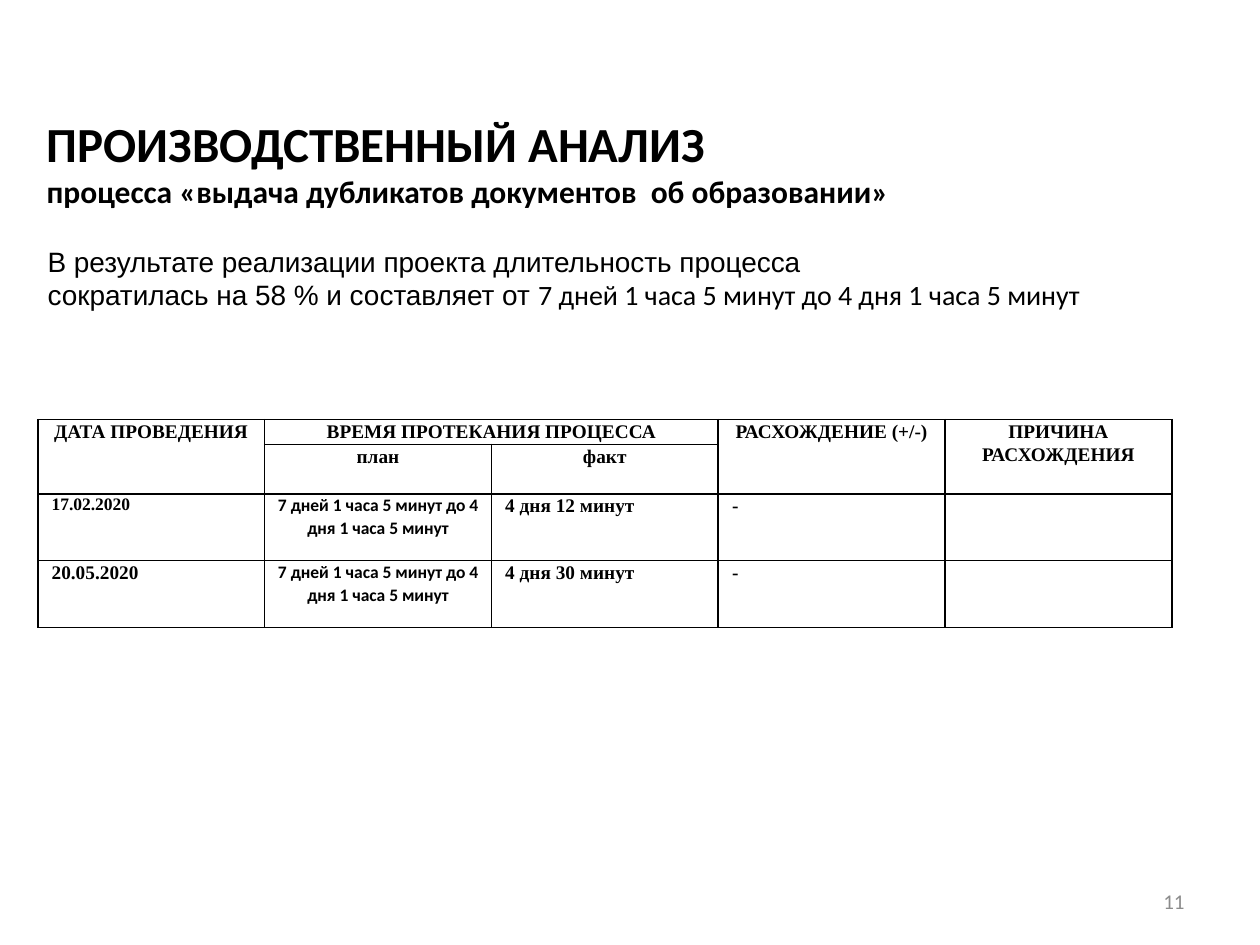
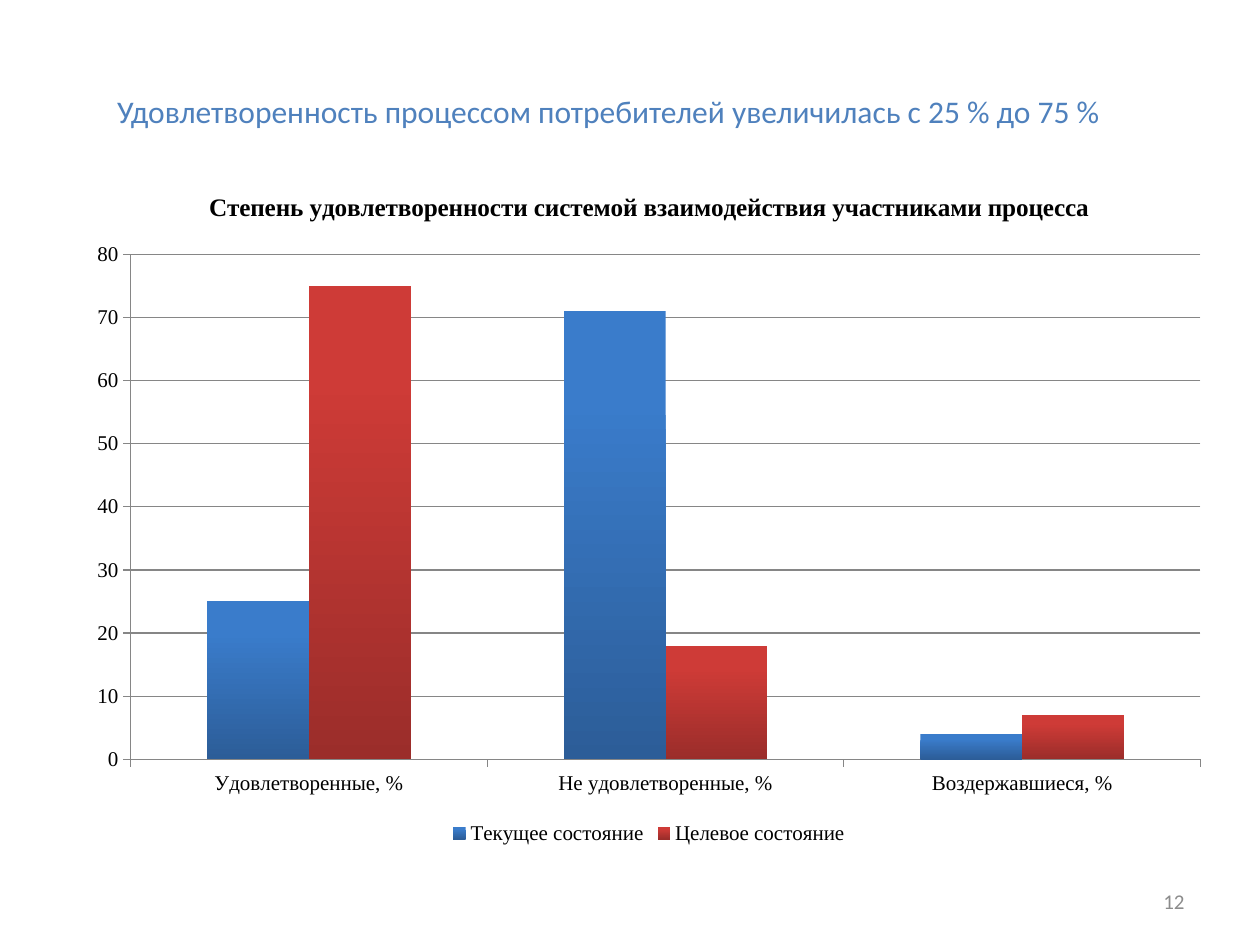
from lxml import etree
from pptx import Presentation
from pptx.chart.data import CategoryChartData
from pptx.dml.color import RGBColor
from pptx.enum.chart import XL_CHART_TYPE, XL_LEGEND_POSITION, XL_TICK_MARK
from pptx.enum.text import MSO_ANCHOR, MSO_AUTO_SIZE, PP_ALIGN
from pptx.oxml.ns import qn
from pptx.util import Inches, Pt

LEFT, CENTER, RIGHT = PP_ALIGN.LEFT, PP_ALIGN.CENTER, PP_ALIGN.RIGHT
TOP, MIDDLE = MSO_ANCHOR.TOP, MSO_ANCHOR.MIDDLE
FIT_SHAPE = MSO_AUTO_SIZE.SHAPE_TO_FIT_TEXT
COLUMNS = XL_CHART_TYPE.COLUMN_CLUSTERED
LEGEND_BOTTOM = XL_LEGEND_POSITION.BOTTOM
TICK_OUTSIDE = XL_TICK_MARK.OUTSIDE

SANS, SERIF, PLAIN = "Calibri", "Times New Roman", "Arial"
BLACK, GREY, BLUE, GRID = "000000", "8C8C8C", "4F81BD", "868686"
TITLE_ONLY = 5

DURATION = "7 дней 1 часа 5 минут до 4 дня 1 часа 5 минут"
PLAN_FORMAT = {"name": SANS, "size": Pt(10)}
HEADINGS = [
    # row, column, last row, last column, text
    (0, 0, 1, 0, "ДАТА ПРОВЕДЕНИЯ"),
    (0, 1, 0, 2, "ВРЕМЯ ПРОТЕКАНИЯ ПРОЦЕССА"),
    (0, 3, 1, 3, "РАСХОЖДЕНИЕ (+/-)"),
    (0, 4, 1, 4, "ПРИЧИНА РАСХОЖДЕНИЯ"),
    (1, 1, 1, 1, "план"),
    (1, 2, 1, 2, "факт"),
]
MEASUREMENTS = [
    ("17.02.2020", Pt(10), "4 дня 12 минут"),
    ("20.05.2020", Pt(11), "4 дня 30 минут"),
]
SATISFACTION_GROUPS = ["Удовлетворенные, %", "Не удовлетворенные, %", "Воздержавшиеся, %"]
SATISFACTION = [
    # state, values, top and bottom colour of the columns
    ("Текущее состояние", (25, 71, 4), "3A7CCB", "2C5D98"),
    ("Целевое состояние", (75, 18, 7), "CE3B37", "9B2D2A"),
]


def rgb(value):
    return RGBColor.from_string(value)


def apply_font(font, color=BLACK, **values):
    for attribute, value in values.items():
        setattr(font, attribute, value)
    font.color.rgb = rgb(color)


def fill_frame(frame, paragraphs, align=LEFT, **frame_format):
    """Write paragraphs, each a list of (text, font format) runs."""
    for attribute, value in frame_format.items():
        setattr(frame, attribute, value)
    for index, runs in enumerate(paragraphs):
        paragraph = frame.add_paragraph() if index else frame.paragraphs[0]
        paragraph.alignment = align
        for text, font_format in runs:
            run = paragraph.add_run()
            run.text = text
            apply_font(run.font, **font_format)


def add_text(slide, box, paragraphs, **options):
    text_box = slide.shapes.add_textbox(*map(Inches, box))
    fill_frame(text_box.text_frame, paragraphs, **{"word_wrap": True, **options})


def add_titled_slide(presentation, number, title_box, title_paragraphs, wrap=True):
    """Add a slide with its formatted title and page number."""
    slide = presentation.slides.add_slide(presentation.slide_layouts[TITLE_ONLY])
    title = slide.shapes.title
    title.left, title.top, title.width, title.height = map(Inches, title_box)
    fill_frame(title.text_frame, title_paragraphs, vertical_anchor=TOP,
               word_wrap=wrap, auto_size=FIT_SHAPE)
    add_text(slide, (7.17, 6.95, 2.33, 0.4),
             [[(str(number), {"name": SANS, "size": Pt(12), "color": GREY})]],
             align=RIGHT, vertical_anchor=MIDDLE)
    return slide


def outline_cell(cell):
    properties = cell._tc.get_or_add_tcPr()
    for side in ("a:lnL", "a:lnR", "a:lnT", "a:lnB"):
        line = etree.SubElement(properties, qn(side), w=str(Pt(1)))
        solid = etree.SubElement(line, qn("a:solidFill"))
        etree.SubElement(solid, qn("a:srgbClr"), val=BLACK)
    cell.fill.background()


def write_cell(cell, text, align=CENTER, indent=0.07, **font_format):
    cell.margin_left = Inches(indent)
    font = {"name": SERIF, "size": Pt(11), "bold": True, **font_format}
    fill_frame(cell.text_frame, [[(text, font)]], align=align)
    cell.text_frame.paragraphs[0].line_spacing = 1.07


def add_measurement_table(slide):
    heights = [0.19, 0.19, 0.53, 0.53]
    table = slide.shapes.add_table(len(heights), 5, Inches(0.3), Inches(3.33),
                                   Inches(9), Inches(sum(heights))).table
    table.first_row = table.horz_banding = False
    for row, height in zip(table.rows, heights):
        row.height = Inches(height)
    for cell in table.iter_cells():
        cell.margin_left = cell.margin_right = Inches(0.07)
        cell.margin_top = cell.margin_bottom = 0
        outline_cell(cell)
    for row, column, last_row, last_column, text in HEADINGS:
        cell = table.cell(row, column)
        if (row, column) != (last_row, last_column):
            cell.merge(table.cell(last_row, last_column))
        write_cell(cell, text)
    for row, (date, date_size, actual) in enumerate(MEASUREMENTS, start=2):
        write_cell(table.cell(row, 0), date, LEFT, 0.11, size=date_size)
        write_cell(table.cell(row, 1), DURATION, **PLAN_FORMAT)
        write_cell(table.cell(row, 2), actual, LEFT, 0.11)
        write_cell(table.cell(row, 3), "-", LEFT, 0.11)


def shade_series(series, top_color, bottom_color):
    fill = series.format.fill
    fill.gradient()
    fill.gradient_angle = 270
    upper, lower = fill.gradient_stops
    upper.color.rgb, upper.position = rgb(top_color), 0.2
    lower.color.rgb, lower.position = rgb(bottom_color), 1
    series.invert_if_negative = False


def add_satisfaction_chart(slide):
    data = CategoryChartData()
    data.categories = SATISFACTION_GROUPS
    for state, values, *_ in SATISFACTION:
        data.add_series(state, values)
    box = map(Inches, (0.59, 1.32, 9.12, 5.42))
    chart = slide.shapes.add_chart(COLUMNS, *box, data).chart
    apply_font(chart.font, name=SERIF, size=Pt(12))

    chart.has_title = True
    heading = "Степень удовлетворенности системой взаимодействия участниками процесса"
    fill_frame(chart.chart_title.text_frame,
               [[(heading, {"name": SERIF, "size": Pt(14.4), "bold": True})]], align=CENTER)
    chart.chart_title.include_in_layout = False
    chart.has_legend = True
    chart.legend.position = LEGEND_BOTTOM
    chart.legend.include_in_layout = False

    plot = chart.plots[0]
    plot.vary_by_categories = False
    plot.gap_width, plot.overlap = 150, 0
    for series, (_, _, top_color, bottom_color) in zip(plot.series, SATISFACTION):
        shade_series(series, top_color, bottom_color)

    percent = chart.value_axis
    percent.minimum_scale, percent.maximum_scale, percent.major_unit = 0, 80, 10
    percent.has_major_gridlines = True
    for axis in (chart.category_axis, percent):
        axis.major_tick_mark = TICK_OUTSIDE
    for lines in (chart.category_axis, percent, percent.major_gridlines):
        lines.format.line.color.rgb = rgb(GRID)
        lines.format.line.width = Pt(0.75)


def add_analysis_slide(presentation):
    heading = {"name": SANS, "size": Pt(28), "bold": True}
    slide = add_titled_slide(presentation, 11, (0.27, 0.85, 6.95, 1.18), [
        [("ПРОИЗВОДСТВЕННЫЙ АНАЛИЗ", heading)],
        [("процесса «выдача дубликатов документов  об образовании»",
          {**heading, "size": Pt(18)})],
    ], wrap=False)
    add_measurement_table(slide)
    body = {"name": PLAIN, "size": Pt(16)}
    add_text(slide, (0.28, 1.89, 9.53, 0.64), [
        [("В результате реализации проекта длительность процесса", body)],
        [("сократилась на 58 % и составляет от ", body), (DURATION, {**body, "name": SANS})],
    ], auto_size=FIT_SHAPE)


def add_satisfaction_slide(presentation):
    slide = add_titled_slide(presentation, 12, (0.83, 0.68, 8.27, 0.4), [
        [("Удовлетворенность процессом потребителей увеличилась с 25 % до 75 %",
          {"name": SANS, "size": Pt(18), "color": BLUE})],
    ])
    add_satisfaction_chart(slide)


def main():
    presentation = Presentation()
    presentation.slide_width, presentation.slide_height = Inches(10), Inches(7.5)
    add_analysis_slide(presentation)
    add_satisfaction_slide(presentation)
    presentation.save("out.pptx")


if __name__ == "__main__":
    main()
